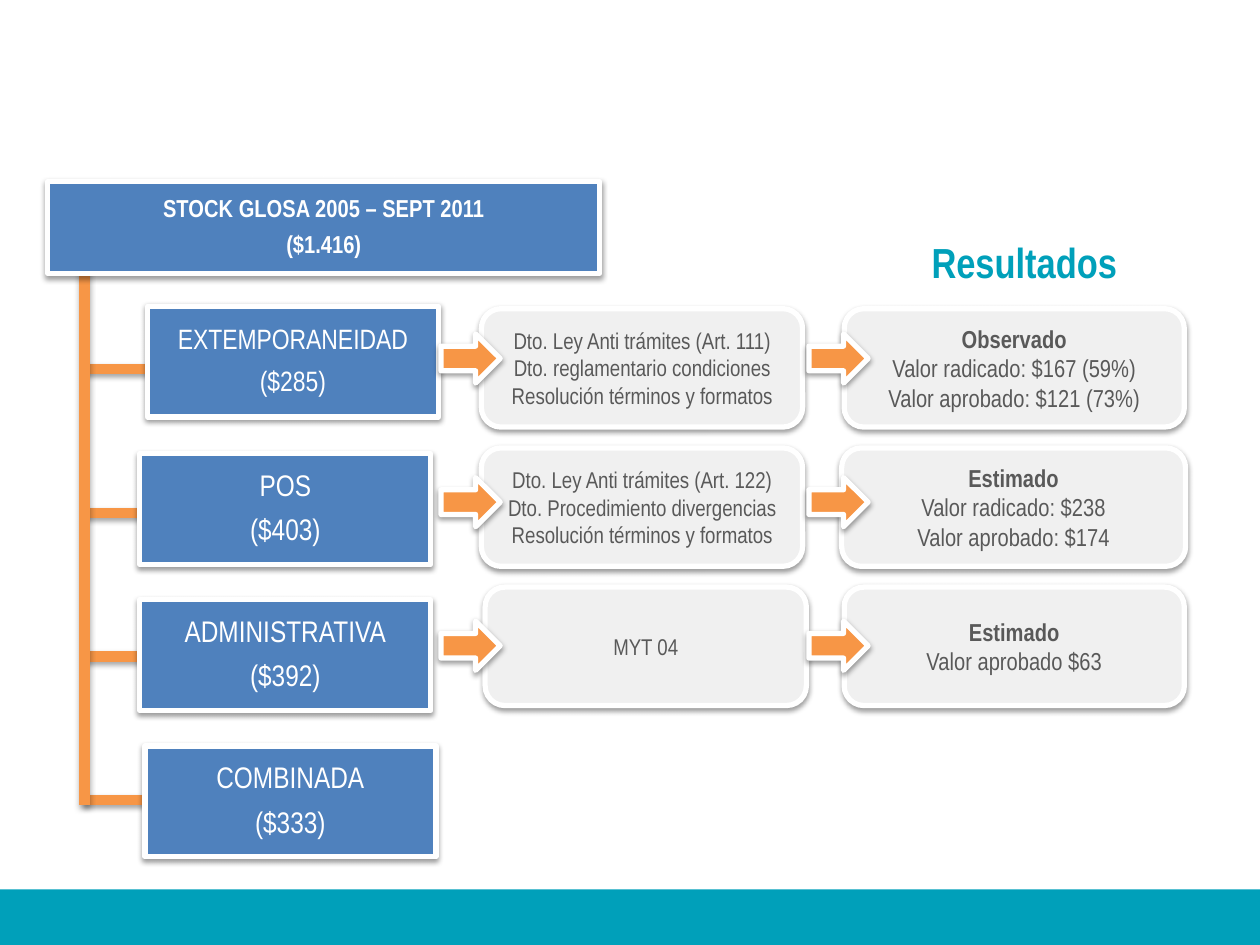
from dataclasses import dataclass

from lxml.etree import SubElement
from pptx import Presentation
from pptx.dml.color import RGBColor
from pptx.enum.shapes import MSO_CONNECTOR, MSO_SHAPE
from pptx.enum.text import MSO_ANCHOR, PP_ALIGN
from pptx.oxml.ns import qn
from pptx.util import Inches, Pt


@dataclass(frozen=True)
class Theme:
    font: str = "Arial Narrow"
    teal: str = "00A0BA"
    blue: str = "4F81BD"
    orange: str = "F79646"
    grey: str = "F0F0F0"
    ink: str = "595959"
    white: str = "FFFFFF"
    shadow: str = "000000"
    heading: int = 24
    category: int = 17
    long_category: int = 16
    result: int = 14
    measure: int = 13
    outline: int = 3
    branch: int = 6


THEME = Theme()
WIDTH, HEIGHT = Inches(10), Inches(7.5)
COLUMNS, ROWS = 100, 75
BRANCH_TOP, BRANCH_STEP = 29.3, 11.4
CARD_TOP, CARD_STEP, CARD_HEIGHT = 24.5, 11.05, 9.4
TRUNK = 6.7

CATEGORIES = [
    ("EXTEMPORANEIDAD", "($285)", 11.7, 24.3, THEME.long_category),
    ("POS", "($403)", 11.1, 36, THEME.category),
    ("ADMINISTRATIVA", "($392)", 11.1, 47.6, THEME.category),
    ("COMBINADA", "($333)", 11.5, 59.2, THEME.category),
]
MEASURES = [
    (38.2, ["Dto. Ley Anti trámites (Art. 111)", "Dto. reglamentario condiciones",
            "Resolución términos y formatos"]),
    (38.2, ["Dto. Ley Anti trámites (Art. 122)", "Dto. Procedimiento divergencias",
            "Resolución términos y formatos"]),
    (38.5, ["MYT 04"]),
]
RESULTS = [
    (67, 27, ["Observado", "Valor radicado: $167 (59%)", "Valor aprobado: $121 (73%)"]),
    (66.8, 27.3, ["Estimado", "Valor radicado: $238", "Valor aprobado: $174"]),
    (67, 27, ["Estimado", "Valor aprobado $63"]),
]


def across(columns):
    return round(WIDTH * columns / COLUMNS)


def down(rows):
    return round(HEIGHT * rows / ROWS)


def color(value):
    return RGBColor.from_string(value)


def add_shadow(shape, opacity, distance):
    properties = shape._element.spPr
    for old in properties.findall(qn("a:effectLst")):
        properties.remove(old)
    effects = SubElement(properties, qn("a:effectLst"))
    shadow = SubElement(effects, qn("a:outerShdw"), blurRad=str(Pt(3.1)),
                        dist=str(Pt(distance)), dir="5400000", rotWithShape="0")
    tint = SubElement(shadow, qn("a:srgbClr"), val=THEME.shadow)
    SubElement(tint, qn("a:alpha"), val=str(opacity * 1000))


def add_plain(page, kind, left, top, width, height, fill):
    shape = page.shapes.add_shape(kind, across(left), down(top), across(width), down(height))
    shape.shadow.inherit = False
    shape.fill.solid()
    shape.fill.fore_color.rgb = color(fill)
    shape.line.fill.background()
    return shape


def add_raised(page, kind, left, top, width, height, fill):
    shape = add_plain(page, kind, left, top, width, height, fill)
    shape.line.color.rgb = color(THEME.white)
    shape.line.width = Pt(THEME.outline)
    add_shadow(shape, 38, 1.6)
    return shape


def write(shape, lines, size, ink, bold_lines=0):
    frame = shape.text_frame
    frame.word_wrap = True
    frame.vertical_anchor = MSO_ANCHOR.MIDDLE
    for index, words in enumerate(lines):
        para = frame.add_paragraph() if index else frame.paragraphs[0]
        para.alignment = PP_ALIGN.CENTER
        span = para.add_run()
        span.text = words
        span.font.name = THEME.font
        span.font.size = Pt(size)
        span.font.bold = index < bold_lines
        span.font.color.rgb = color(ink)


def add_label(page, left, top, width, height, lines, size, bold_lines=0):
    box = add_raised(page, MSO_SHAPE.RECTANGLE, left, top, width, height, THEME.blue)
    write(box, lines, size, THEME.white, bold_lines)
    frame = box.text_frame
    frame.margin_left = frame.margin_right = Inches(0.04)
    frame.margin_top = frame.margin_bottom = Inches(0.02)
    for para in frame.paragraphs:
        para.line_spacing = 0.9
        para.space_after = Pt(round(size * 0.4, 1))


def add_card(page, left, row, width, lines, size, bold_lines=0):
    card = add_raised(page, MSO_SHAPE.ROUNDED_RECTANGLE, left, CARD_TOP + row * CARD_STEP,
                      width, CARD_HEIGHT, THEME.grey)
    write(card, lines, size, THEME.ink, bold_lines)


def add_branch(page, left, top, right, bottom):
    branch = page.shapes.add_connector(MSO_CONNECTOR.STRAIGHT, across(left), down(top),
                                       across(right), down(bottom))
    branch.line.color.rgb = color(THEME.orange)
    branch.line.width = Pt(THEME.branch)
    add_shadow(branch, 35, 1.8)


def add_heading(page):
    heading = add_plain(page, MSO_SHAPE.OVAL, 68.1, 18.9, 26.4, 3.7, THEME.white)
    write(heading, ["Resultados"], THEME.heading, THEME.teal, 1)


def add_tree(page):
    for row in range(len(CATEGORIES)):
        level = BRANCH_TOP + row * BRANCH_STEP
        add_branch(page, TRUNK, level, 13.8, level)
    add_branch(page, TRUNK, 19.8, TRUNK, 63.9)
    for name, amount, left, top, size in CATEGORIES:
        add_label(page, left, top, 23.1, 8.8, [name, amount], size)
    add_label(page, 3.8, 14.4, 43.8, 7.3,
              ["STOCK GLOSA 2005 – SEPT 2011", "($1.416)"], THEME.result, 2)


def main():
    deck = Presentation()
    deck.slide_width, deck.slide_height = WIDTH, HEIGHT
    page = deck.slides.add_slide(deck.slide_layouts[6])
    add_plain(page, MSO_SHAPE.RECTANGLE, 0, 70.6, COLUMNS, ROWS - 70.6, THEME.teal)
    for row, (left, lines) in enumerate(MEASURES):
        add_card(page, left, row, 25.5, lines, THEME.measure)
    for row, (left, width, lines) in enumerate(RESULTS):
        add_card(page, left, row, width, lines, THEME.result, 1)
    add_heading(page)
    add_tree(page)
    for left in (35, 64.2):
        for row in range(len(MEASURES)):
            add_raised(page, MSO_SHAPE.RIGHT_ARROW, left, 26.5 + row * BRANCH_STEP,
                       4.7, 3.9, THEME.orange)
    deck.save("out.pptx")


if __name__ == "__main__":
    main()
